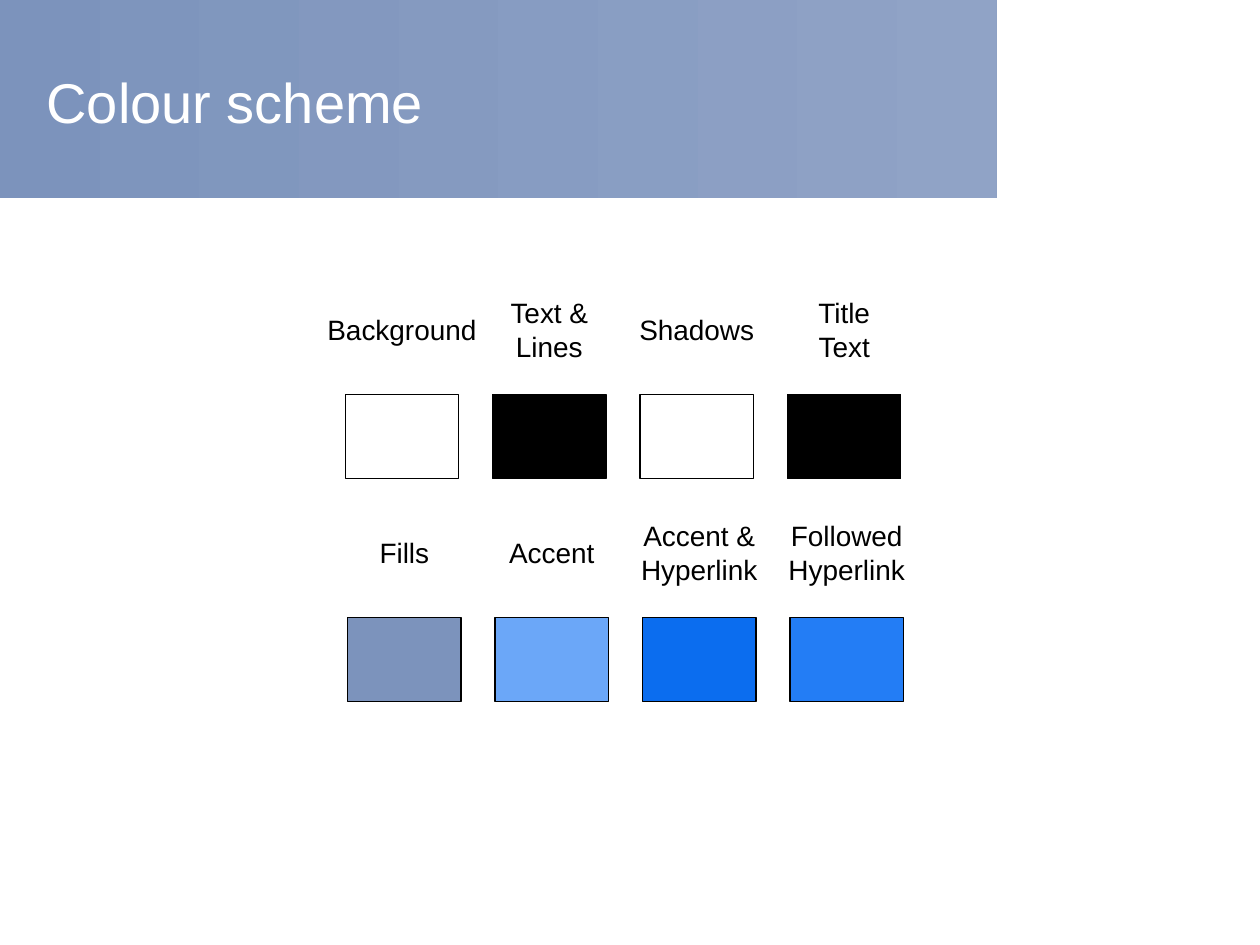
import pptx
import pptx.dml.color
import pptx.enum.shapes
import pptx.enum.text
import pptx.util

Inches = pptx.util.Inches
RGBColor = pptx.dml.color.RGBColor
PP_ALIGN = pptx.enum.text.PP_ALIGN
MSO_ANCHOR = pptx.enum.text.MSO_ANCHOR
MSO_AUTO_SIZE = pptx.enum.text.MSO_AUTO_SIZE

WHITE = RGBColor(0xFF, 0xFF, 0xFF)
BLACK = RGBColor(0x00, 0x00, 0x00)
FILLS = RGBColor(0x7C, 0x93, 0xBC)
FILLS_LIGHT = RGBColor(0x90, 0xA3, 0xC6)
ACCENT = RGBColor(0x6B, 0xA7, 0xF8)
HYPERLINK = RGBColor(0x0B, 0x6D, 0xEF)
FOLLOWED = RGBColor(0x23, 0x7D, 0xF5)

FONT = "Arial"
SWATCH_WIDTH, SWATCH_HEIGHT = 0.9, 0.67
SWATCH_PITCH = 1.17
LABEL_RISE = 0.51  # from label centre down to swatch top
LINE_HEIGHT, LABEL_PADDING = 0.27, 0.1

# Each row: left, top, then (label, label width, colour) per swatch
SWATCH_ROWS = [
    (2.74, 3.13, [
        ("Background", 1.39, WHITE),
        ("Text &\nLines", 0.84, BLACK),
        ("Shadows", 1.13, WHITE),
        ("Title\vText", 0.65, BLACK),
    ]),
    (2.76, 4.9, [
        ("Fills", 0.63, FILLS),
        ("Accent", 0.9, ACCENT),
        ("Accent &\nHyperlink", 1.16, HYPERLINK),
        ("Followed\nHyperlink", 1.16, FOLLOWED),
    ]),
]


def add_rectangle(slide, left, top, width, height):
    rectangle = slide.shapes.add_shape(
        pptx.enum.shapes.MSO_SHAPE.RECTANGLE,
        Inches(left), Inches(top), Inches(width), Inches(height))
    rectangle.shadow.inherit = False
    return rectangle


def add_text(slide, text, left, top, width, height, size, color, align):
    box = slide.shapes.add_textbox(
        Inches(left), Inches(top), Inches(width), Inches(height))
    frame = box.text_frame
    frame.text = text
    for paragraph in frame.paragraphs:
        paragraph.alignment = align
        for run in paragraph.runs:
            run.font.name = FONT
            run.font.size = pptx.util.Pt(size)
            run.font.color.rgb = color
    return frame


def add_header(slide):
    band = add_rectangle(slide, 0, 0, 7.91, 1.57)
    band.line.fill.background()
    band.fill.gradient()
    band.fill.gradient_angle = 0
    for stop, color in zip(band.fill.gradient_stops, (FILLS, FILLS_LIGHT)):
        stop.color.rgb = color

    title = add_text(slide, "Colour scheme", 0.27, 0.3, 7.48, 1.01,
                     32, WHITE, PP_ALIGN.LEFT)
    title.word_wrap = True
    title.vertical_anchor = MSO_ANCHOR.MIDDLE


def add_swatch(slide, left, top, color):
    swatch = add_rectangle(slide, left, top, SWATCH_WIDTH, SWATCH_HEIGHT)
    swatch.fill.solid()
    swatch.fill.fore_color.rgb = color
    swatch.line.color.rgb = BLACK
    swatch.line.width = pptx.util.Pt(0.75)


def add_label(slide, text, center_x, center_y, width):
    height = LABEL_PADDING + LINE_HEIGHT * len(text.splitlines())
    label = add_text(slide, text, center_x - width / 2, center_y - height / 2,
                     width, height, 16, BLACK, PP_ALIGN.CENTER)
    label.word_wrap = False
    label.auto_size = MSO_AUTO_SIZE.SHAPE_TO_FIT_TEXT


def main():
    presentation = pptx.Presentation()
    presentation.slide_width = Inches(10)
    presentation.slide_height = Inches(7.5)
    slide = presentation.slides.add_slide(presentation.slide_layouts[6])

    # Title band
    add_header(slide)

    # Labelled colour swatches
    for row_left, top, swatches in SWATCH_ROWS:
        for column, (text, label_width, color) in enumerate(swatches):
            left = row_left + column * SWATCH_PITCH
            add_swatch(slide, left, top, color)
            add_label(slide, text, left + SWATCH_WIDTH / 2,
                      top - LABEL_RISE, label_width)

    presentation.save("out.pptx")


if __name__ == "__main__":
    main()
